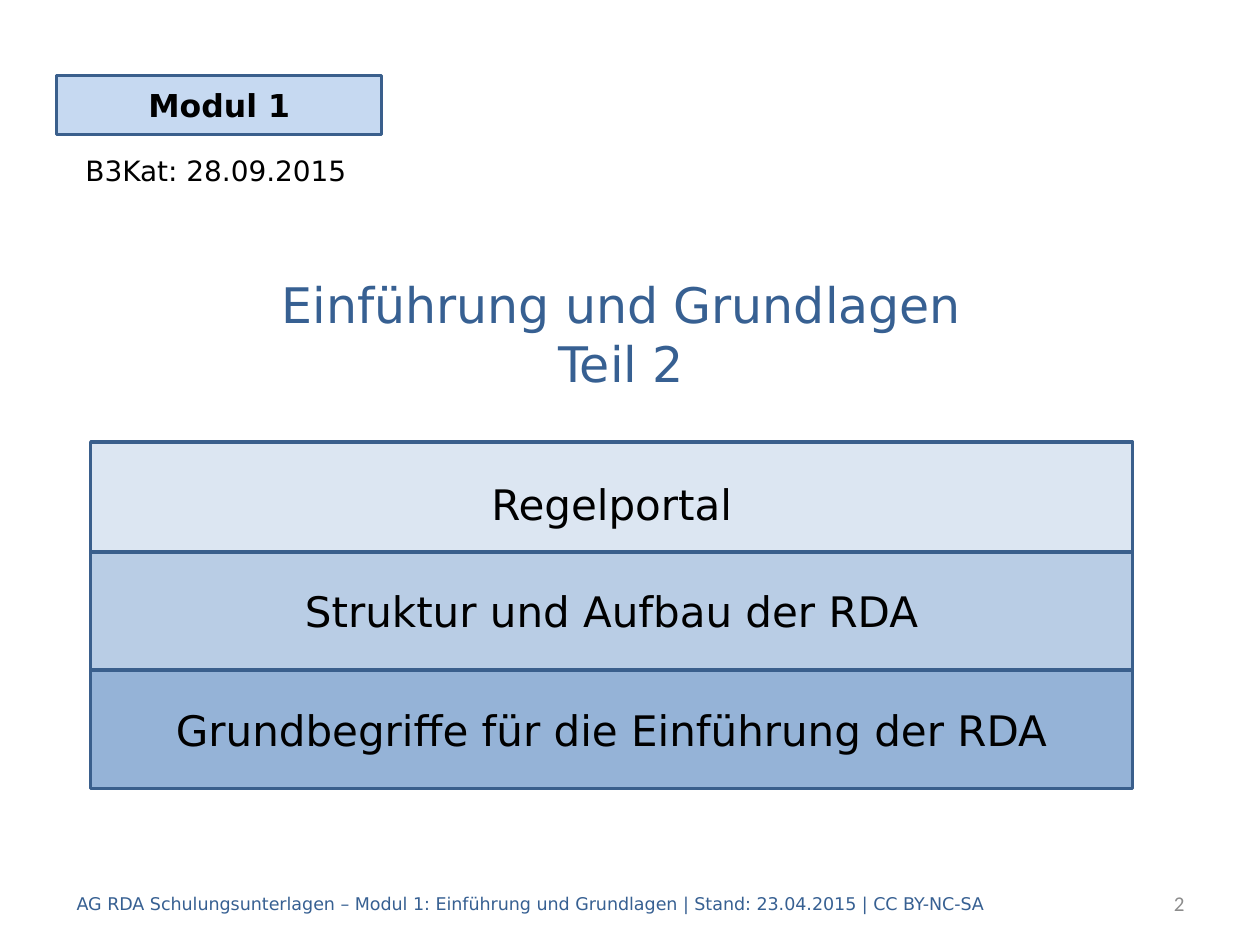
from dataclasses import dataclass

from pptx import Presentation
from pptx.dml.color import RGBColor
from pptx.enum.shapes import MSO_SHAPE
from pptx.enum.text import MSO_ANCHOR, MSO_AUTO_SIZE, PP_ALIGN
from pptx.slide import Slide
from pptx.text.text import TextFrame
from pptx.util import Inches, Pt

SANS = "DejaVu Sans"
BLACK = "000000"
TITLE_BLUE = "376092"
BORDER_BLUE = "3A5F8C"


@dataclass
class Box:
    left: float
    top: float
    width: float
    height: float

    def lengths(self) -> tuple:
        return tuple(Inches(v) for v in (self.left, self.top, self.width, self.height))


@dataclass
class TextStyle:
    size: float
    color: str = BLACK
    font: str = SANS
    bold: bool = False
    align: PP_ALIGN = PP_ALIGN.CENTER
    anchor: MSO_ANCHOR = MSO_ANCHOR.MIDDLE


@dataclass
class Layer:
    text: str
    fill: str
    height: float
    top_inset: float = 0.05


def rgb(color: str) -> RGBColor:
    return RGBColor.from_string(color)


def write(frame: TextFrame, text: str, style: TextStyle) -> None:
    frame.text = text
    frame.word_wrap = True
    frame.vertical_anchor = style.anchor
    for paragraph in frame.paragraphs:
        paragraph.alignment = style.align
        for run in paragraph.runs:
            run.font.name = style.font
            run.font.size = Pt(style.size)
            run.font.bold = style.bold
            run.font.color.rgb = rgb(style.color)


def add_label(slide: Slide, box: Box, text: str, style: TextStyle) -> None:
    label = slide.shapes.add_textbox(*box.lengths())
    write(label.text_frame, text, style)


def add_panel(slide: Slide, box: Box, fill: str, text: str, style: TextStyle,
              top_inset: float = 0.05) -> None:
    panel = slide.shapes.add_shape(MSO_SHAPE.RECTANGLE, *box.lengths())
    panel.shadow.inherit = False
    panel.fill.solid()
    panel.fill.fore_color.rgb = rgb(fill)
    panel.line.color.rgb = rgb(BORDER_BLUE)
    panel.line.width = Pt(2)
    panel.text_frame.margin_top = Inches(top_inset)
    write(panel.text_frame, text, style)


def add_title(slide: Slide, box: Box, text: str, style: TextStyle) -> None:
    title = slide.shapes.title
    title.left, title.top, title.width, title.height = box.lengths()
    frame = title.text_frame
    frame.auto_size = MSO_AUTO_SIZE.NONE
    # The bottom inset lifts the two lines above the middle
    frame.margin_top = 0
    frame.margin_bottom = Inches(0.46)
    write(frame, text, style)


def main() -> None:
    prs = Presentation()
    prs.slide_width, prs.slide_height = Inches(10), Inches(7.5)
    slide = prs.slides.add_slide(prs.slide_layouts[5])

    # Title and module heading
    add_title(slide, Box(0.43, 2.25, 9, 1.25),
              "Einführung und Grundlagen\vTeil 2", TextStyle(28, TITLE_BLUE))
    add_panel(slide, Box(0.45, 0.6, 2.58, 0.47), "C6D9F1", "Modul 1",
              TextStyle(18, bold=True))

    # Footer
    add_label(slide, Box(7.91, 6.97, 1.59, 0.4), "2",
              TextStyle(12, "8C8C8C", "Calibri", align=PP_ALIGN.RIGHT))
    add_label(slide, Box(0.51, 6.97, 8.5, 0.4),
              "AG RDA Schulungsunterlagen – Modul 1: Einführung und Grundlagen"
              " | Stand: 23.04.2015 | CC BY-NC-SA",
              TextStyle(10, TITLE_BLUE, align=PP_ALIGN.LEFT))

    # Topics stacked without gaps
    layers = [
        Layer("Regelportal", "DCE6F2", 0.87, top_inset=0.15),
        Layer("Struktur und Aufbau der RDA", "B9CDE5", 0.94),
        Layer("Grundbegriffe für die Einführung der RDA", "95B3D7", 0.94),
    ]
    top = 3.51
    for layer in layers:
        add_panel(slide, Box(0.72, top, 8.27, layer.height), layer.fill,
                  layer.text, TextStyle(24), layer.top_inset)
        top += layer.height

    # Date of the session
    add_label(slide, Box(0.58, 1.17, 2.39, 0.37), "B3Kat: 28.09.2015",
              TextStyle(16, align=PP_ALIGN.LEFT, anchor=MSO_ANCHOR.TOP))

    prs.save("out.pptx")


if __name__ == "__main__":
    main()
